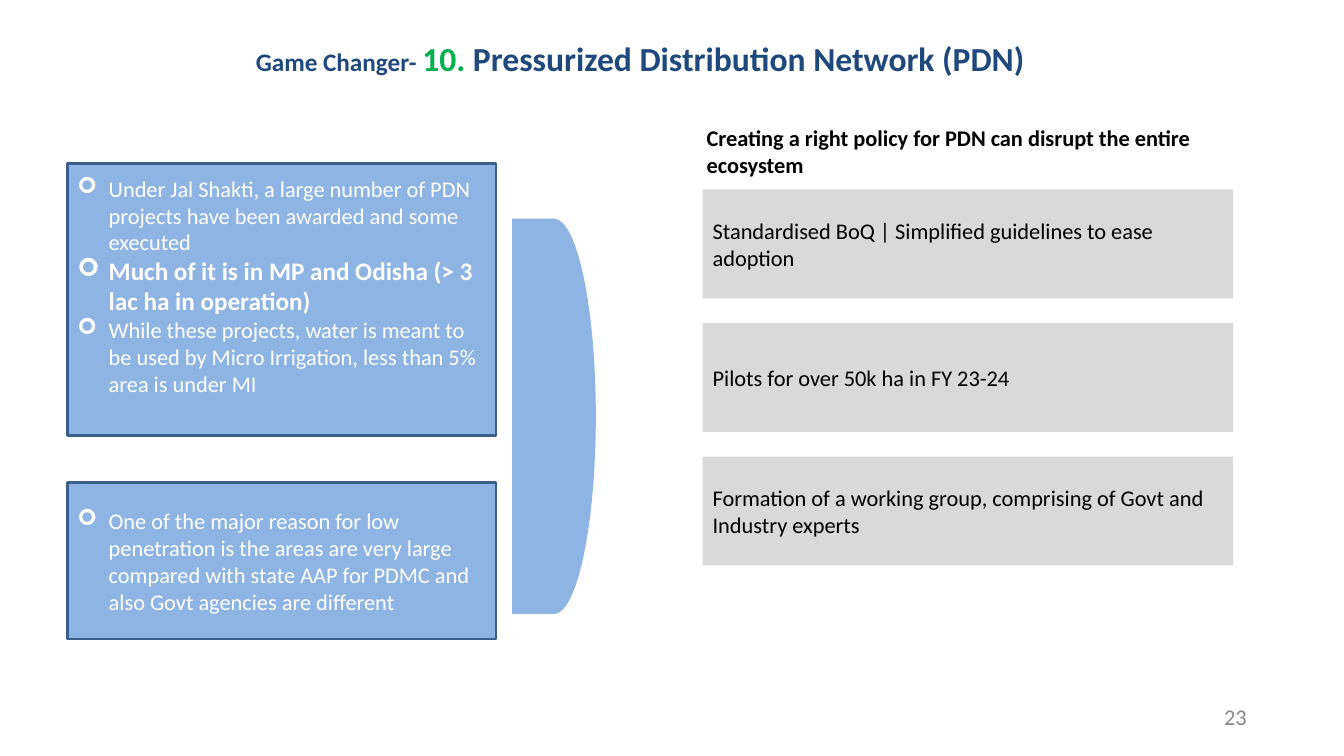
from dataclasses import dataclass

from lxml import etree
from pptx import Presentation
from pptx.dml.color import RGBColor
from pptx.enum import shapes, text
from pptx.oxml import ns
from pptx.util import Inches, Pt


@dataclass(frozen=True)
class Theme:
    face: str = "Calibri"
    blue: str = "8EB4E3"
    edge: str = "3A5F8C"
    grey: str = "D9D9D9"
    navy: str = "1F497D"
    green: str = "00B050"
    dim: str = "888888"
    white: str = "FFFFFF"
    black: str = "000000"
    body: int = 16
    lead: int = 18
    head: int = 24


class Deck:
    def __init__(self, theme):
        self.theme = theme
        self.prs = Presentation()
        self.prs.slide_width = Inches(13.33)
        self.prs.slide_height = Inches(7.5)
        self.slide = self.prs.slides.add_slide(self.prs.slide_layouts[6])

    def font(self, font, color, size=None, bold=False):
        font.name = self.theme.face
        font.size = Pt(size or self.theme.body)
        font.bold = bold
        font.color.rgb = RGBColor.from_string(color)

    def label(self, at, words="", color=None, size=None, bold=False, flush=False):
        box = self.slide.shapes.add_textbox(*map(Inches, at))
        frame = box.text_frame
        frame.word_wrap = True
        if flush:
            frame.margin_left = frame.margin_right = 0
            frame.margin_top = frame.margin_bottom = 0
        para = frame.paragraphs[0]
        if words:
            para.text = words
            self.font(para.font, color or self.theme.black, size, bold)
        return para

    def title(self, at, runs):
        para = self.label(at, flush=True)
        para.alignment = text.PP_ALIGN.CENTER
        for words, color, size in runs:
            run = para.add_run()
            run.text = words
            self.font(run.font, color, size, True)

    def shape(self, kind, at, fill, edge=None):
        item = self.slide.shapes.add_shape(kind, *map(Inches, at))
        item.shadow.inherit = False
        item.fill.solid()
        item.fill.fore_color.rgb = RGBColor.from_string(fill)
        if edge:
            item.line.color.rgb = RGBColor.from_string(edge)
            item.line.width = Pt(2)
        else:
            item.line.fill.background()
        return item

    def panel(self, at, items, fill, color, edge=None, mark=None, foot=0.05):
        box = self.shape(shapes.MSO_SHAPE.RECTANGLE, at, fill, edge)
        frame = box.text_frame
        frame.word_wrap = True
        frame.vertical_anchor = text.MSO_ANCHOR.MIDDLE
        frame.margin_bottom = Inches(foot)
        for i, (words, size, bold) in enumerate(items):
            para = frame.add_paragraph() if i else frame.paragraphs[0]
            para.text = words
            para.alignment = text.PP_ALIGN.LEFT
            if mark:
                self.bullet(para, mark)
            self.font(para.font, color, size, bold)

    def bullet(self, para, mark):
        props = para._p.get_or_add_pPr()
        props.set("marL", str(Inches(0.31)))
        props.set("indent", str(-Inches(0.31)))
        etree.SubElement(props, ns.qn("a:buFont")).set("typeface", "Wingdings")
        etree.SubElement(props, ns.qn("a:buChar")).set("char", mark)


def main():
    look = Theme()
    deck = Deck(look)

    # Title and page number
    deck.title((0.55, 0.38, 11.6, 0.42), [
        ("Game Changer- ", look.navy, look.lead),
        ("10.", look.green, look.head),
        (" Pressurized Distribution Network (PDN)", look.navy, look.head),
    ])
    page = deck.label((12.14, 7.07, 0.44, 0.18), "23", look.dim, flush=True)
    page.line_spacing = Pt(12.4)

    # Current state and its cause
    state = [
        ("Under Jal Shakti, a large number of PDN projects have been awarded "
         "and some executed", look.body, False),
        ("Much of it is in MP and Odisha (> 3 lac ha in operation)",
         look.lead, True),
        ("While these projects, water is meant to be used by Micro Irrigation, "
         "less than 5% area is under MI", look.body, False),
    ]
    cause = [
        ("One of the major reason for low penetration is the areas are very "
         "large compared with state AAP for PDMC and also Govt agencies are "
         "different", look.body, False),
    ]
    for top, high, items, foot in ((1.62, 2.7, state, 0.32),
                                   (4.79, 1.55, cause, 0.05)):
        deck.panel((0.67, top, 4.25, high), items, look.blue, look.white,
                   look.edge, "➢", foot)

    # Link between the two sides
    deck.shape(shapes.MSO_SHAPE.FLOWCHART_DELAY, (5.08, 2.17, 0.83, 3.92),
               look.blue)

    # Policy steps
    deck.label((6.91, 1.18, 5.39, 0.64),
               "Creating a right policy for PDN can disrupt the entire ecosystem",
               bold=True)
    steps = (
        "Standardised BoQ | Simplified guidelines to ease adoption",
        "Pilots for over 50k ha in FY 23-24",
        "Formation of a working group, comprising of Govt and Industry experts",
    )
    for i, step in enumerate(steps):
        deck.panel((6.97, 1.88 + 1.325 * i, 5.26, 1.08),
                   [(step, look.body, False)], look.grey, look.black)

    deck.prs.save("out.pptx")


if __name__ == "__main__":
    main()
